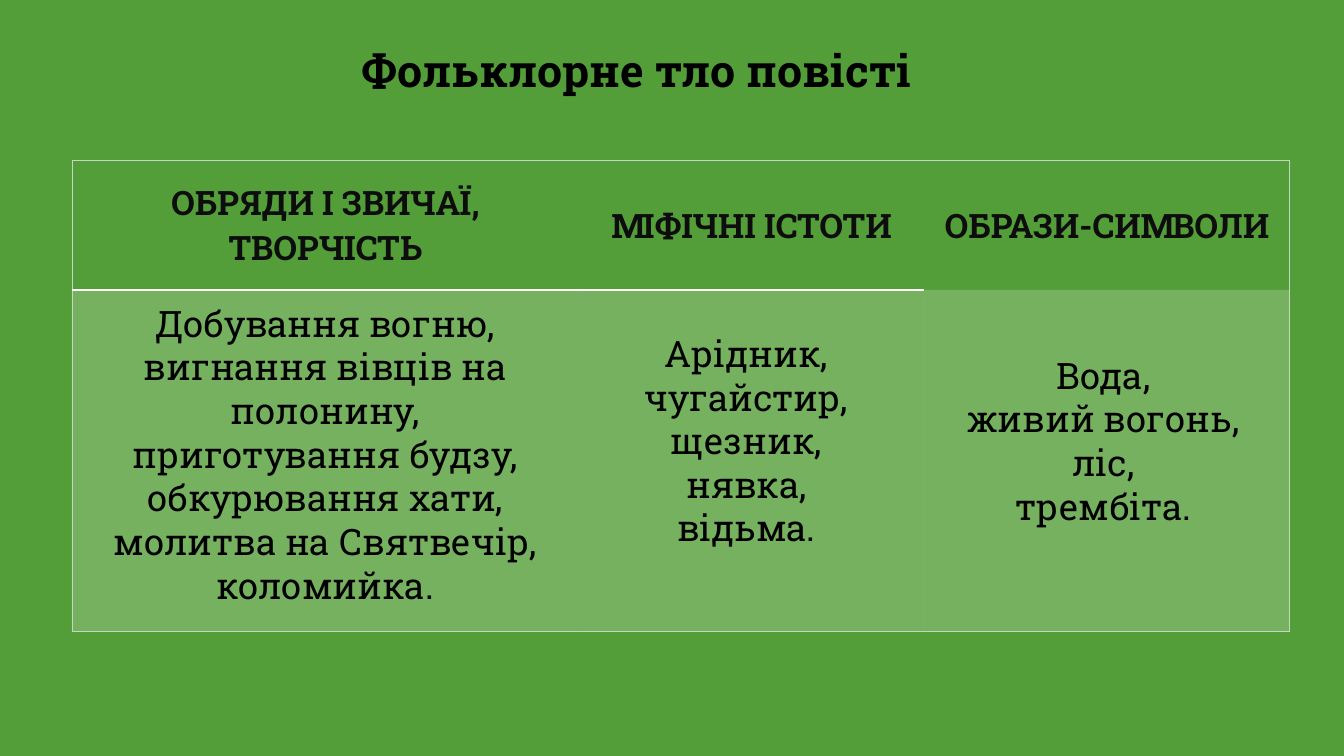
from lxml.etree import SubElement
from pptx import Presentation
from pptx.dml.color import RGBColor
from pptx.enum.text import MSO_ANCHOR, PP_ALIGN
from pptx.oxml.ns import qn
from pptx.util import Pt

PX = 914400 / 100.8
COLORS = {"green": "549E39", "black": "000000", "head": "0D0D0D",
          "edge": "C3D6BF", "white": "FFFFFF"}


def px(*nums):
    return [round(n * PX) for n in nums]


def write(frame, text, size=26, color="black", bold=False, align=PP_ALIGN.CENTER):
    frame.word_wrap = True
    for i, line in enumerate(text.split("\n")):
        para = frame.paragraphs[0] if i == 0 else frame.add_paragraph()
        para.alignment = align
        run = para.add_run()
        run.text = line
        run.font.name = "Roboto Slab"
        run.font.size = Pt(size)
        run.font.bold = bold
        run.font.color.rgb = RGBColor.from_string(COLORS[color])


prs = Presentation()
prs.slide_width, prs.slide_height = px(1344, 756)
slide = prs.slides.add_slide(prs.slide_layouts[6])
slide.background.fill.solid()
slide.background.fill.fore_color.rgb = RGBColor.from_string(COLORS["green"])

# Title
title = slide.shapes.add_textbox(*px(352, 38, 601, 65))
write(title.text_frame, "Фольклорне тло повісті", size=32, bold=True, align=PP_ALIGN.LEFT)

# Table grid
heads = ["ОБРЯДИ І ЗВИЧАЇ, ТВОРЧІСТЬ", "МІФІЧНІ ІСТОТИ", "ОБРАЗИ-СИМВОЛИ"]
widths, heights = [507, 345, 366], [130, 342]
table = slide.shapes.add_table(2, 3, *px(72, 160, sum(widths), sum(heights))).table
table.first_row = table.horz_banding = False
for col, width in zip(table.columns, px(*widths)):
    col.width = width
for row, height in zip(table.rows, px(*heights)):
    row.height = height

# Cell fills, headings and borders
for r in range(2):
    for c, head in enumerate(heads):
        cell = table.cell(r, c)
        if r == 0:
            cell.fill.background()
            cell.vertical_anchor = MSO_ANCHOR.MIDDLE
            write(cell.text_frame, head, size=24, color="head", bold=True)
        else:
            cell.fill.solid()
            cell.fill.fore_color.rgb = RGBColor.from_string(COLORS["white"])
        props = cell._tc.get_or_add_tcPr()
        for tint in props.iter(qn("a:srgbClr")):
            SubElement(tint, qn("a:alpha"), val="20000")

        rule = "white" if c < 2 else None
        sides = {"L": "edge" if c == 0 else None,
                 "R": "edge" if c == 2 else None,
                 "T": "edge" if r == 0 else rule,
                 "B": "edge" if r == 1 else rule}
        for i, (side, color) in enumerate(sides.items()):
            weight = Pt(1.5 if color == "white" else 0.75)
            line = SubElement(props, qn("a:ln" + side), w=str(weight))
            if color:
                fill = SubElement(line, qn("a:solidFill"))
                SubElement(fill, qn("a:srgbClr"), val=COLORS[color])
            else:
                SubElement(line, qn("a:noFill"))
            props.insert(i, line)

# Lists over the lower row
lists = [
    ((72, 296, 507, 319), "Добування вогню, вигнання вівців на полонину,\n"
     "приготування будзу, обкурювання хати, молитва на Святвечір, коломийка."),
    ((574, 326, 345, 231), "Арідник,\nчугайстир,\nщезник,\nнявка,\nвідьма."),
    ((918, 348, 371, 187), "Вода,\nживий вогонь,\nліс,\nтрембіта."),
]
for place, text in lists:
    box = slide.shapes.add_textbox(*px(*place))
    write(box.text_frame, text)

prs.save("out.pptx")
